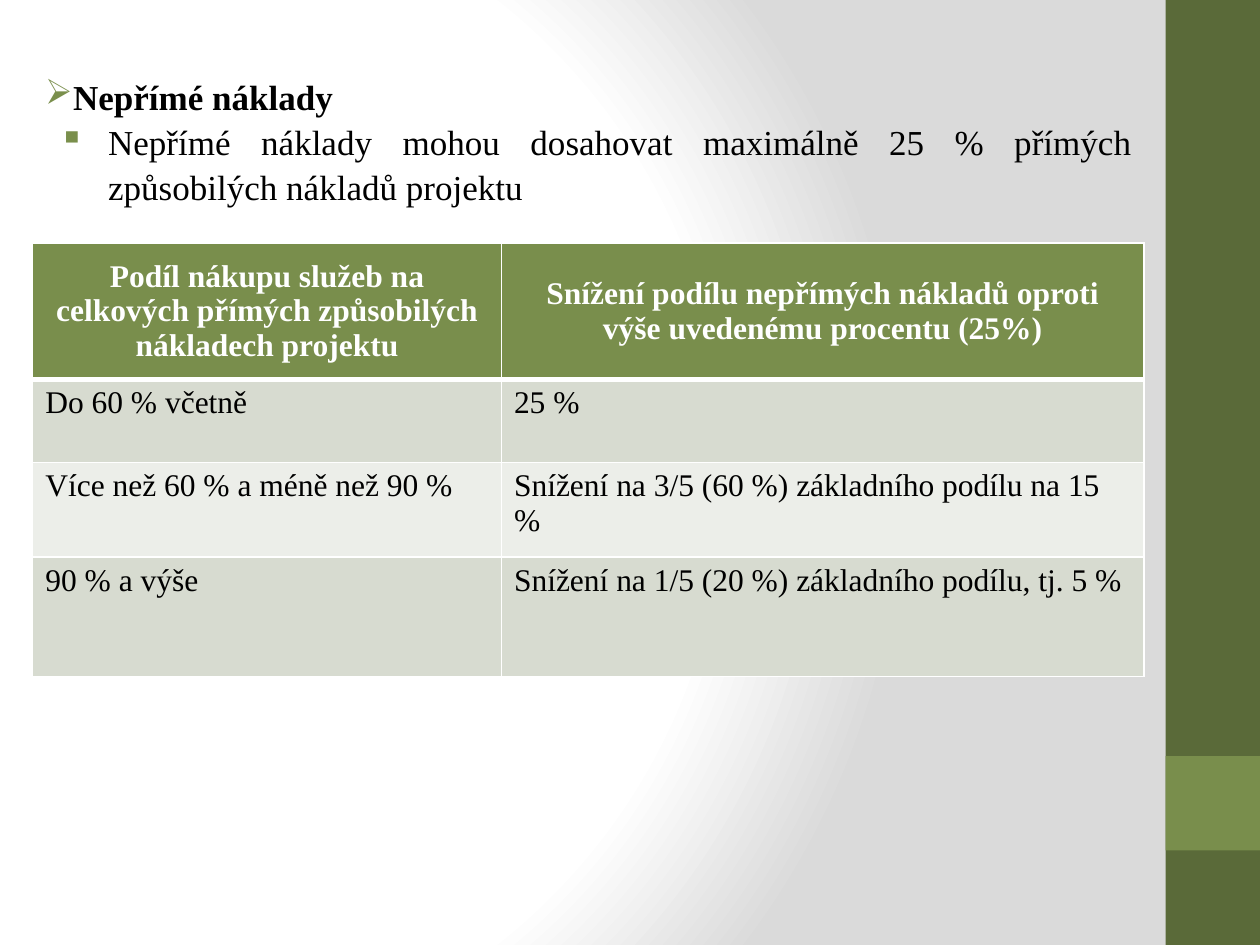
"""Build a slide on indirect costs with a two-level text and a rate table."""
import pptx
import pptx.dml.color
import pptx.enum.shapes
import pptx.enum.text
import pptx.oxml
import pptx.oxml.ns
import pptx.util
from lxml import etree

Inches = pptx.util.Inches
Pt = pptx.util.Pt
RGBColor = pptx.dml.color.RGBColor
qn = pptx.oxml.ns.qn

DARK_GREEN = RGBColor(0x5A, 0x6A, 0x39)
GREEN = RGBColor(0x79, 0x8E, 0x4C)
BULLET_GREEN = RGBColor(0x7A, 0x8F, 0x4C)
BAND_DARK = RGBColor(0xD7, 0xDB, 0xD0)
BAND_LIGHT = RGBColor(0xEC, 0xEE, 0xE9)
GRAY = RGBColor(0xDA, 0xDA, 0xDA)
WHITE = RGBColor(0xFF, 0xFF, 0xFF)
BLACK = RGBColor(0x00, 0x00, 0x00)


def style_run(r, size, color, bold):
    r.font.name = "Times New Roman"
    r.font.size = Pt(size)
    r.font.color.rgb = color
    r.font.bold = bold


def add_border(cell, side, width):
    ln = etree.SubElement(cell._tc.get_or_add_tcPr(), qn(f"a:ln{side}"), w=str(Pt(width)))
    fill = etree.SubElement(ln, qn("a:solidFill"))
    etree.SubElement(fill, qn("a:srgbClr"), val=str(WHITE))


prs = pptx.Presentation()
prs.slide_width = Inches(10)
prs.slide_height = Inches(7.5)
s = prs.slides.add_slide(prs.slide_layouts[6])

s.background.fill.solid()
bg = s.element.find(".//" + qn("p:bgPr"))
stops = "".join(
    f'<a:gs pos="{pos * 1000}"><a:srgbClr val="{color}"/></a:gs>'
    for pos, color in ((0, WHITE), (75, WHITE), (100, GRAY))
)
bg.replace(bg[0], pptx.oxml.parse_xml(
    f'<a:gradFill {pptx.oxml.ns.nsdecls("a")} rotWithShape="1"><a:gsLst>{stops}</a:gsLst>'
    '<a:path path="circle"><a:fillToRect l="20000" t="50000" r="100000" b="50000"/>'
    '</a:path></a:gradFill>'
))

for top, height, color in ((0, 7.5, DARK_GREEN), (6, 0.75, GREEN)):
    sp = s.shapes.add_shape(
        pptx.enum.shapes.MSO_SHAPE.RECTANGLE,
        Inches(9.25), Inches(top), Inches(0.75), Inches(height))
    sp.shadow.inherit = False
    sp.fill.solid()
    sp.fill.fore_color.rgb = color
    sp.line.fill.background()

rows = [
    ("Podíl nákupu služeb na celkových přímých způsobilých nákladech projektu",
     "Snížení podílu nepřímých nákladů oproti výše uvedenému procentu (25%)"),
    ("Do 60 % včetně", "25 %"),
    ("Více než 60 % a méně než 90 %", "Snížení na 3/5 (60 %) základního podílu na 15 %"),
    ("90 % a výše", "Snížení na 1/5 (20 %) základního podílu, tj. 5 %"),
]
table = s.shapes.add_table(
    4, 2, Inches(0.26), Inches(1.93), Inches(8.82), Inches(3.44)).table
for column, width in zip(table.columns, (3.72, 5.1)):
    column.width = Inches(width)
for row, height in zip(table.rows, (1.08, 0.66, 0.75, 0.95)):
    row.height = Inches(height)

for i, texts in enumerate(rows):
    header = i == 0
    for j, text in enumerate(texts):
        cell = table.cell(i, j)
        for side, width in (("L", 1), ("R", 1), ("T", 3 if i == 1 else 1), ("B", 3 if header else 1)):
            add_border(cell, side, width)
        cell.fill.solid()
        cell.fill.fore_color.rgb = GREEN if header else BAND_DARK if i % 2 else BAND_LIGHT
        p = cell.text_frame.paragraphs[0]
        p.text = text
        style_run(p.runs[0], 18, WHITE if header else BLACK, header)
        if header:
            cell.vertical_anchor = pptx.enum.text.MSO_ANCHOR.MIDDLE
            p.alignment = pptx.enum.text.PP_ALIGN.CENTER

sp = s.shapes.add_textbox(Inches(0.26), Inches(0.52), Inches(8.82), Inches(1.41))
tf = sp.text_frame
tf.word_wrap = True
tf.text = (
    "Nepřímé náklady\n"
    "Nepřímé náklady mohou dosahovat maximálně 25 % přímých způsobilých nákladů projektu"
)
for level, (p, bullet, margin) in enumerate(zip(tf.paragraphs, "➢▪", (0, 0.5))):
    p.level = level
    p.alignment = pptx.enum.text.PP_ALIGN.JUSTIFY
    p.line_spacing = 1.08
    style_run(p.runs[0], 20, BLACK, level == 0)
    pPr = p._p.get_or_add_pPr()
    pPr.set("marL", str(Inches(margin)))
    pPr.set("indent", str(Inches(-0.39)))
    color = etree.SubElement(pPr, qn("a:buClr"))
    etree.SubElement(color, qn("a:srgbClr"), val=str(BULLET_GREEN))
    etree.SubElement(pPr, qn("a:buChar"), char=bullet)

prs.save("out.pptx")
